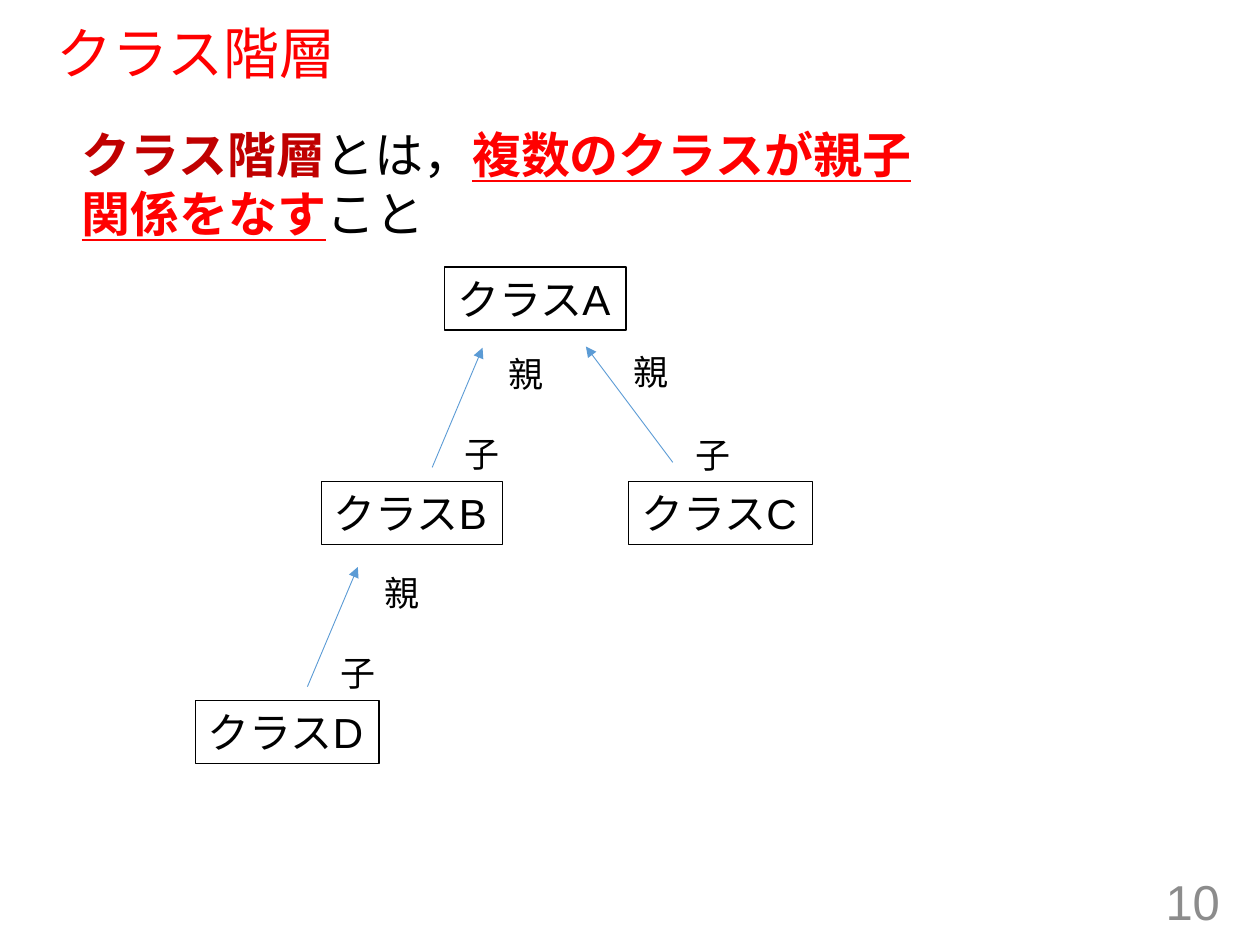
from lxml import etree
from pptx import Presentation
from pptx.dml.color import RGBColor
from pptx.enum import shapes, text
from pptx.oxml import ns
from pptx.util import Inches, Pt

COLORS = {
    "red": "FF0000",
    "dark_red": "C00000",
    "black": "000000",
    "gray": "8C8C8C",
    "blue": "5B9BD5",
}


def style(run, size, color, strong=False, underline=False):
    run.font.name = "Arial"
    run.font.size = Pt(size)
    run.font.bold = strong
    run.font.underline = underline
    run.font.color.rgb = RGBColor.from_string(COLORS[color])


def add_label(box, words, size, color, wrap=False, anchor=text.MSO_ANCHOR.TOP):
    frame = box.text_frame
    frame.word_wrap = wrap
    frame.vertical_anchor = anchor
    frame.text = words
    paragraph = frame.paragraphs[0]
    paragraph.alignment = text.PP_ALIGN.LEFT
    style(paragraph.runs[0], size, color)
    return paragraph


prs = Presentation()
prs.slide_width = Inches(10)
prs.slide_height = Inches(7.5)
slide = prs.slides.add_slide(prs.slide_layouts[6])

title = slide.shapes.add_textbox(Inches(0.35), Inches(0.19), Inches(9.25), Inches(0.51))
heading = add_label(title, "クラス階層", 32, "red", True, text.MSO_ANCHOR.MIDDLE)
heading.line_spacing = 0.9

definition = slide.shapes.add_textbox(Inches(0.55), Inches(0.94), Inches(6.98), Inches(4.55))
definition.text_frame.word_wrap = True
sentence = definition.text_frame.paragraphs[0]
for words, color, strong, underline in [
    ("クラス階層", "dark_red", True, False),
    ("とは，", "black", False, False),
    ("複数のクラスが親子関係をなす", "red", True, True),
    ("こと", "black", False, False),
]:
    run = sentence.add_run()
    run.text = words
    style(run, 28, color, strong, underline)

page_number = slide.shapes.add_textbox(Inches(7.53), Inches(6.95), Inches(2.25), Inches(0.4))
number = add_label(page_number, "10", 28, "gray", True, text.MSO_ANCHOR.MIDDLE)
number.alignment = text.PP_ALIGN.RIGHT

for letter, left, top, width in [
    ("A", 3.53, 2.12, 1.44),
    ("B", 2.55, 3.82, 1.44),
    ("C", 4.99, 3.82, 1.46),
    ("D", 1.55, 5.56, 1.46),
]:
    class_box = slide.shapes.add_shape(
        shapes.MSO_SHAPE.RECTANGLE, Inches(left), Inches(top), Inches(width), Inches(0.5)
    )
    class_box.shadow.inherit = False
    class_box.fill.background()
    class_box.line.color.rgb = RGBColor.from_string(COLORS["black"])
    class_box.line.width = Pt(0.75)
    add_label(class_box, "クラス" + letter, 24, "black")

for child_end, parent_end, parent_at, child_at in [
    ((3.43, 3.71), (3.83, 2.76), (3.94, 2.75), (3.59, 3.38)),
    ((2.44, 5.45), (2.84, 4.5), (2.95, 4.49), (2.6, 5.12)),
    ((5.34, 3.67), (4.65, 2.75), (4.93, 2.73), (5.42, 3.39)),
]:
    arrow = slide.shapes.add_connector(
        shapes.MSO_CONNECTOR.STRAIGHT, *map(Inches, child_end + parent_end)
    )
    arrow.line.color.rgb = RGBColor.from_string(COLORS["blue"])
    arrow.line.width = Pt(0.5)
    etree.SubElement(arrow.line._get_or_add_ln(), ns.qn("a:tailEnd"), type="triangle")
    etree.SubElement(arrow._element.spPr, ns.qn("a:effectLst"))
    for role, (left, top) in [("親", parent_at), ("子", child_at)]:
        role_label = slide.shapes.add_textbox(
            Inches(left), Inches(top), Inches(0.48), Inches(0.44)
        )
        add_label(role_label, role, 20, "black")

prs.save("out.pptx")
